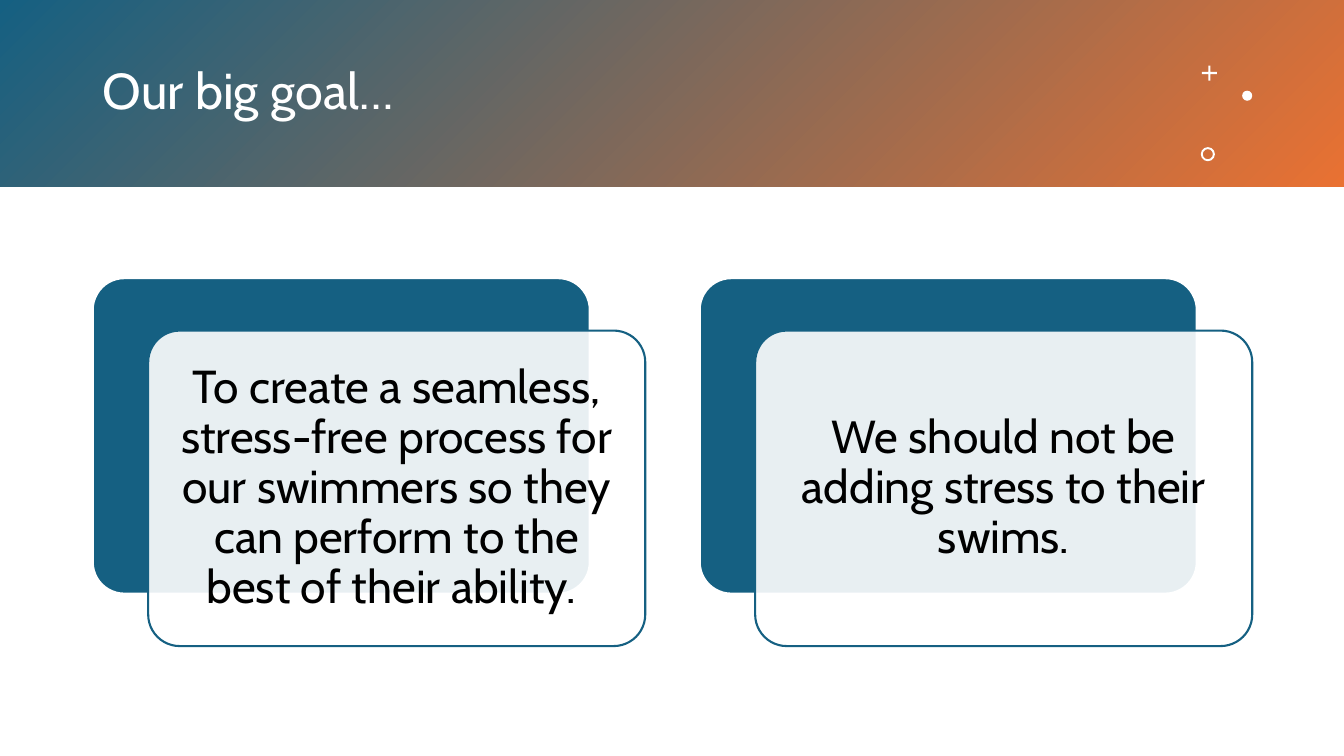
import pptx
import pptx.dml.color
import pptx.enum.shapes
import pptx.enum.text
import pptx.oxml
import pptx.oxml.ns
import pptx.util

TITLE = "Our big goal…"
GOALS = [
    "To create a seamless, stress-free process for our swimmers so they "
    "can perform to the best of their ability. ",
    "We should not be adding stress to their swims.",
]
COLORS = {"blue": "156082", "orange": "E97132", "white": "FFFFFF", "black": "000000"}
FONT = "Cabin"

SLIDE_WIDTH, SLIDE_HEIGHT = 13.33, 7.5
BAND_HEIGHT = 1.85
MARGIN, CARD_TOP = 0.92, 2.76
CARD_WIDTH, CARD_HEIGHT = 4.93, 3.13
COLUMN_STEP = 6.02
FRONT_SHIFT = (0.55, 0.52)
FRONT_OPACITY = 90

SHAPES = pptx.enum.shapes.MSO_SHAPE
# preset, left, top, size, adjustment
ORNAMENTS = [
    (SHAPES.CROSS, 11.92, 0.65, 0.15, 0.43),
    (SHAPES.OVAL, 12.32, 0.9, 0.1, None),
    (SHAPES.DONUT, 11.91, 1.46, 0.14, 0.14),
]


def rgb(name):
    return pptx.dml.color.RGBColor.from_string(COLORS[name])


def add_shape(slide, preset, box, fill, line=None, adjustment=None):
    shape = slide.shapes.add_shape(preset, *(pptx.util.Inches(length) for length in box))
    shape.shadow.inherit = False
    shape.fill.solid()
    shape.fill.fore_color.rgb = rgb(fill)
    if line:
        shape.line.color.rgb = rgb(line)
        shape.line.width = pptx.util.Pt(1.5)
    else:
        shape.line.fill.background()
    if adjustment is not None:
        shape.adjustments[0] = adjustment
    return shape


def set_opacity(shape, percent):
    color = shape.fill._xPr.find(".//" + pptx.oxml.ns.qn("a:srgbClr"))
    alpha = pptx.oxml.parse_xml(f'<a:alpha {pptx.oxml.ns.nsdecls("a")} val="{percent * 1000}"/>')
    color.append(alpha)


def write(shape, text, size, color, alignment, inset):
    frame = shape.text_frame
    frame.word_wrap = True
    frame.auto_size = pptx.enum.text.MSO_AUTO_SIZE.NONE
    frame.vertical_anchor = pptx.enum.text.MSO_ANCHOR.MIDDLE
    frame.margin_left = frame.margin_right = pptx.util.Inches(inset)
    frame.margin_top = frame.margin_bottom = pptx.util.Inches(inset)
    paragraph = frame.paragraphs[0]
    paragraph.alignment = alignment
    paragraph.line_spacing = 0.9
    run = paragraph.add_run()
    run.text = text
    run.font.name = FONT
    run.font.size = pptx.util.Pt(size)
    run.font.color.rgb = rgb(color)


def add_header(slide):
    title = slide.shapes.title
    title.left, title.top = pptx.util.Inches(MARGIN), pptx.util.Inches(0.33)
    title.width, title.height = pptx.util.Inches(10.75), pptx.util.Inches(1.19)
    write(title, TITLE, 36, "white", pptx.enum.text.PP_ALIGN.LEFT, 0.1)

    band = add_shape(slide, SHAPES.RECTANGLE, (0, 0, SLIDE_WIDTH, BAND_HEIGHT), "blue")
    band.fill.gradient()
    band.fill.gradient_angle = 315
    for stop, name in zip(band.fill.gradient_stops, ("blue", "orange")):
        stop.color.rgb = rgb(name)
    title._element.addprevious(band._element)

    for preset, left, top, size, adjustment in ORNAMENTS:
        add_shape(slide, preset, (left, top, size, size), "white", adjustment=adjustment)


def add_goal(slide, column, text):
    left = MARGIN + column * COLUMN_STEP
    size = (CARD_WIDTH, CARD_HEIGHT)
    add_shape(slide, SHAPES.ROUNDED_RECTANGLE, (left, CARD_TOP, *size), "blue", "white", 0.1)
    front_box = (left + FRONT_SHIFT[0], CARD_TOP + FRONT_SHIFT[1], *size)
    front = add_shape(slide, SHAPES.ROUNDED_RECTANGLE, front_box, "white", "blue", 0.1)
    set_opacity(front, FRONT_OPACITY)
    write(front, text, 33, "black", pptx.enum.text.PP_ALIGN.CENTER, 0.14)


def main():
    presentation = pptx.Presentation()
    presentation.slide_width = pptx.util.Inches(SLIDE_WIDTH)
    presentation.slide_height = pptx.util.Inches(SLIDE_HEIGHT)
    slide = presentation.slides.add_slide(presentation.slide_layouts[5])
    add_header(slide)
    for column, text in enumerate(GOALS):
        add_goal(slide, column, text)
    presentation.save("out.pptx")


if __name__ == "__main__":
    main()
